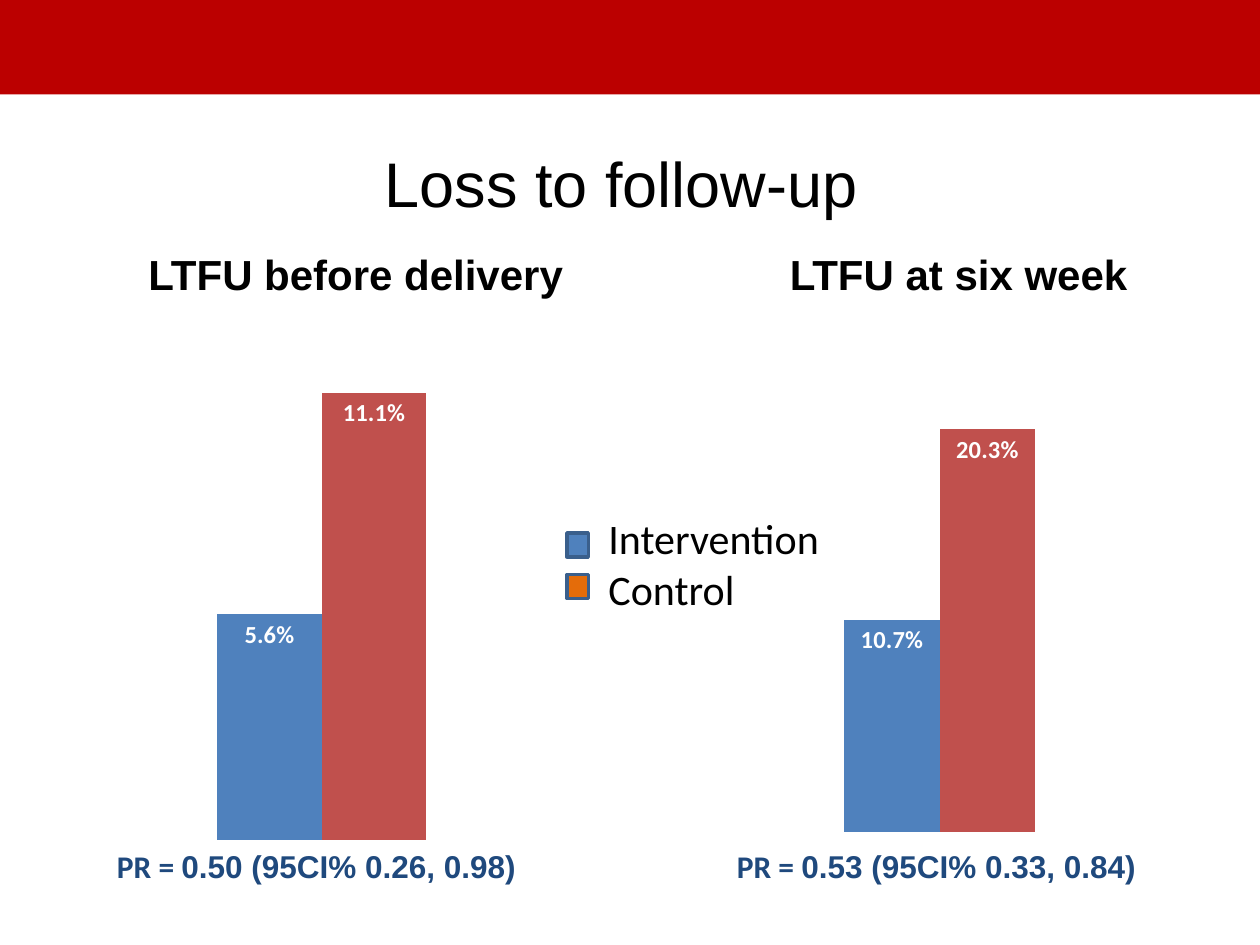
from lxml import etree
from pptx import Presentation
from pptx.chart.data import CategoryChartData
from pptx.dml.color import RGBColor
from pptx.enum.chart import XL_CHART_TYPE, XL_LABEL_POSITION
from pptx.enum.shapes import MSO_SHAPE
from pptx.enum.text import MSO_ANCHOR, PP_ALIGN
from pptx.oxml.ns import qn
from pptx.util import Inches, Pt

COLUMNS = XL_CHART_TYPE.COLUMN_CLUSTERED
INSIDE_END = XL_LABEL_POSITION.INSIDE_END
RECTANGLE = MSO_SHAPE.RECTANGLE
MIDDLE, TOP = MSO_ANCHOR.MIDDLE, MSO_ANCHOR.TOP
CENTER, LEFT = PP_ALIGN.CENTER, PP_ALIGN.LEFT

WIDTH, HEIGHT = 10, 7.5
COLORS = {
    "band": "BB0000", "text": "000000", "ratio": "1F497D", "label": "FFFFFF",
    "intervention": "4F81BD", "control": "C0504D",
    "control key": "E46C0A", "key line": "3A5F8C",
}
TITLE = "Loss to follow-up"
# Boxes are left, top, width, height; plot holds shares of the chart's size
PANELS = [
    {"heading": "LTFU before delivery", "heading_box": (1.08, 1.92, 3.52, 0.5),
     "ratio": "0.50 (95CI% 0.26, 0.98)", "left": 0.83,
     "chart_box": (0.83, 2.75, 3.45, 4), "plot": (0.02, 0.02, 0.96, 0.96),
     "values": (0.056, 0.111), "top_value": 0.12},
    {"heading": "LTFU at six week", "heading_box": (6.17, 1.92, 2.91, 0.5),
     "ratio": "0.53 (95CI% 0.33, 0.84)", "left": 5.75,
     "chart_box": (5.75, 2.5, 3.32, 4.23), "plot": (0.06, 0.04, 0.91, 0.93),
     "values": (0.107, 0.203), "top_value": 0.25},
]
SERIES = [("Series 1", "intervention"), ("Series 2", "control")]
LEGEND = [("Intervention", "intervention"), ("Control", "control key")]
KEY_LEFT, KEY_TOP, KEY_STEP = 4.5, 4.23, 0.33


def color(name):
    return RGBColor.from_string(COLORS[name])


def inches(box):
    return [Inches(length) for length in box]


def style(font, size, name, tint="text", bold=False):
    font.size, font.name, font.bold = Pt(size), name, bold
    font.color.rgb = color(tint)


def add_text(page, box, lines, size, tint="text", bold=False,
             align=LEFT, anchor=TOP, wrap=False):
    """Each line is a list of (text, font name) spans."""
    frame = page.shapes.add_textbox(*inches(box)).text_frame
    frame.word_wrap, frame.vertical_anchor = wrap, anchor
    for index, spans in enumerate(lines):
        para = frame.paragraphs[0] if index == 0 else frame.add_paragraph()
        para.alignment = align
        for text, font_name in spans:
            span = para.add_run()
            span.text = text
            style(span.font, size, font_name, tint, bold)
    return frame


def add_rectangle(page, box, fill, line=None):
    shape = page.shapes.add_shape(RECTANGLE, *inches(box))
    shape.shadow.inherit = False
    shape.fill.solid()
    shape.fill.fore_color.rgb = color(fill)
    if line:
        shape.line.color.rgb = color(line)
        shape.line.width = Pt(2)
    else:
        shape.line.fill.background()


def place_plot(chart, shares):
    """Fix the inner plot area as shares of the chart's size."""
    area = chart._chartSpace.find(".//" + qn("c:plotArea"))
    for old in area.findall(qn("c:layout")):
        area.remove(old)
    layout = etree.Element(qn("c:layout"))
    manual = etree.SubElement(layout, qn("c:manualLayout"))
    settings = [("layoutTarget", "inner"), ("xMode", "edge"), ("yMode", "edge")]
    for tag, value in settings + list(zip("xywh", shares)):
        etree.SubElement(manual, qn("c:" + tag)).set("val", str(value))
    area.insert(0, layout)


def add_column_chart(page, panel):
    data = CategoryChartData(number_format="0.0%")
    data.categories = ["1"]
    for (name, _), value in zip(SERIES, panel["values"]):
        data.add_series(name, [value])
    chart = page.shapes.add_chart(COLUMNS, *inches(panel["chart_box"]), data).chart
    chart.has_legend = chart.has_title = False
    style(chart.font, 10, "Calibri")
    place_plot(chart, panel["plot"])
    for axis in (chart.category_axis, chart.value_axis):
        axis.visible = axis.has_major_gridlines = False
    chart.value_axis.minimum_scale = 0
    chart.value_axis.maximum_scale = panel["top_value"]
    chart.value_axis.tick_labels.number_format = "0.0%"
    chart.value_axis.tick_labels.number_format_is_linked = False

    plot = chart.plots[0]
    plot.gap_width, plot.overlap, plot.vary_by_categories = 199, 0, False
    for series, (_, fill) in zip(plot.series, SERIES):
        series.format.fill.solid()
        series.format.fill.fore_color.rgb = color(fill)
        labels = series.data_labels
        labels.show_value, labels.position = True, INSIDE_END
        labels.number_format, labels.number_format_is_linked = "0.0%", False
        style(labels.font, 14, "Calibri", "label", bold=True)


def main():
    deck = Presentation()
    deck.slide_width, deck.slide_height = Inches(WIDTH), Inches(HEIGHT)
    page = deck.slides.add_slide(deck.slide_layouts[6])

    add_rectangle(page, (0, 0, WIDTH, HEIGHT / 10), "band")
    add_text(page, (0.5, 0.98, 8.86, 0.93), [[(TITLE, "Arial")]], 36,
             align=CENTER, anchor=MIDDLE, wrap=True)
    for panel in PANELS:
        add_text(page, panel["heading_box"], [[(panel["heading"], "Arial")]],
                 24, bold=True)
        add_column_chart(page, panel)
        add_text(page, (panel["left"], 6.67, 3.45, 0.4),
                 [[("PR = ", "Calibri"), (panel["ratio"], "Arial")]],
                 18, "ratio", bold=True)

    legend = add_text(page, (4.42, 4.02, 2.21, 0.91),
                      [[(text, "Calibri")] for text, _ in LEGEND], 24)
    for para in legend.paragraphs:
        para._p.get_or_add_pPr().set("marL", str(Inches(0.31)))
    for row, (_, fill) in enumerate(LEGEND):
        add_rectangle(page, (KEY_LEFT, KEY_TOP + row * KEY_STEP, 0.17, 0.19),
                      fill, "key line")
    deck.save("out.pptx")


if __name__ == "__main__":
    main()
